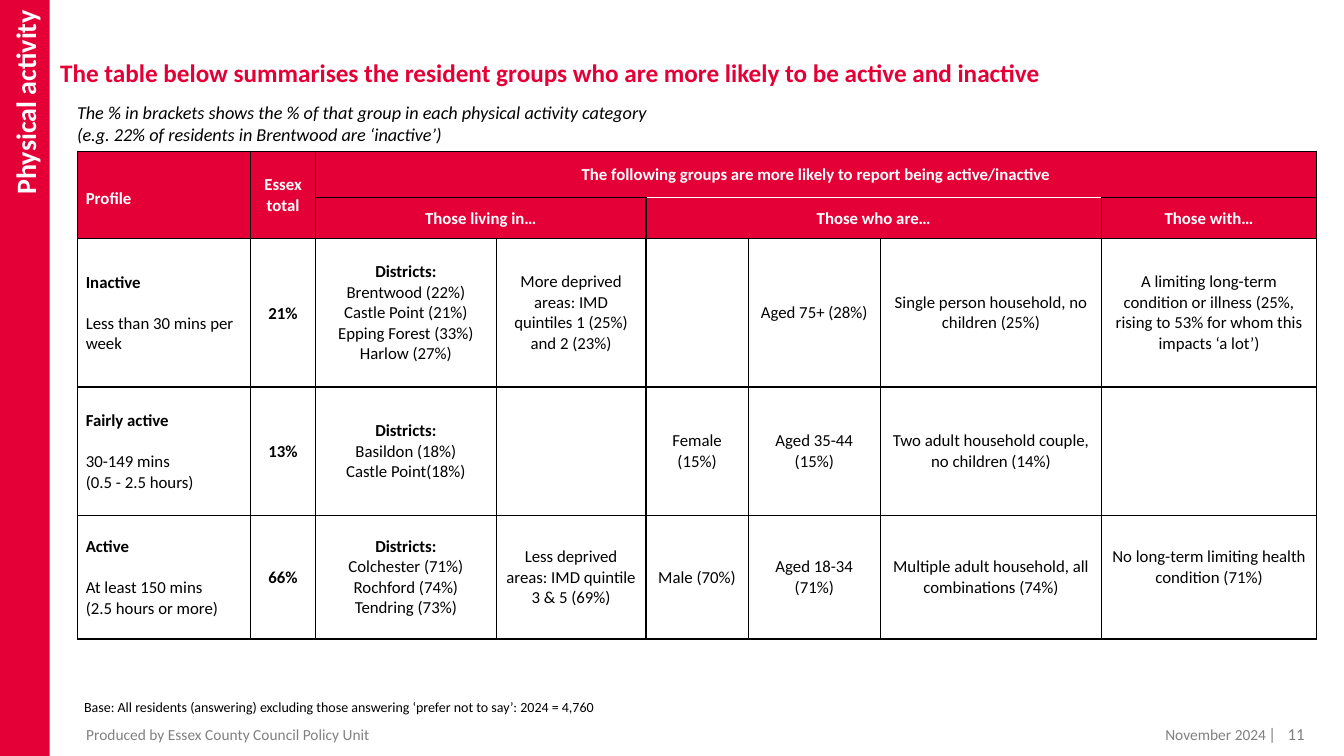
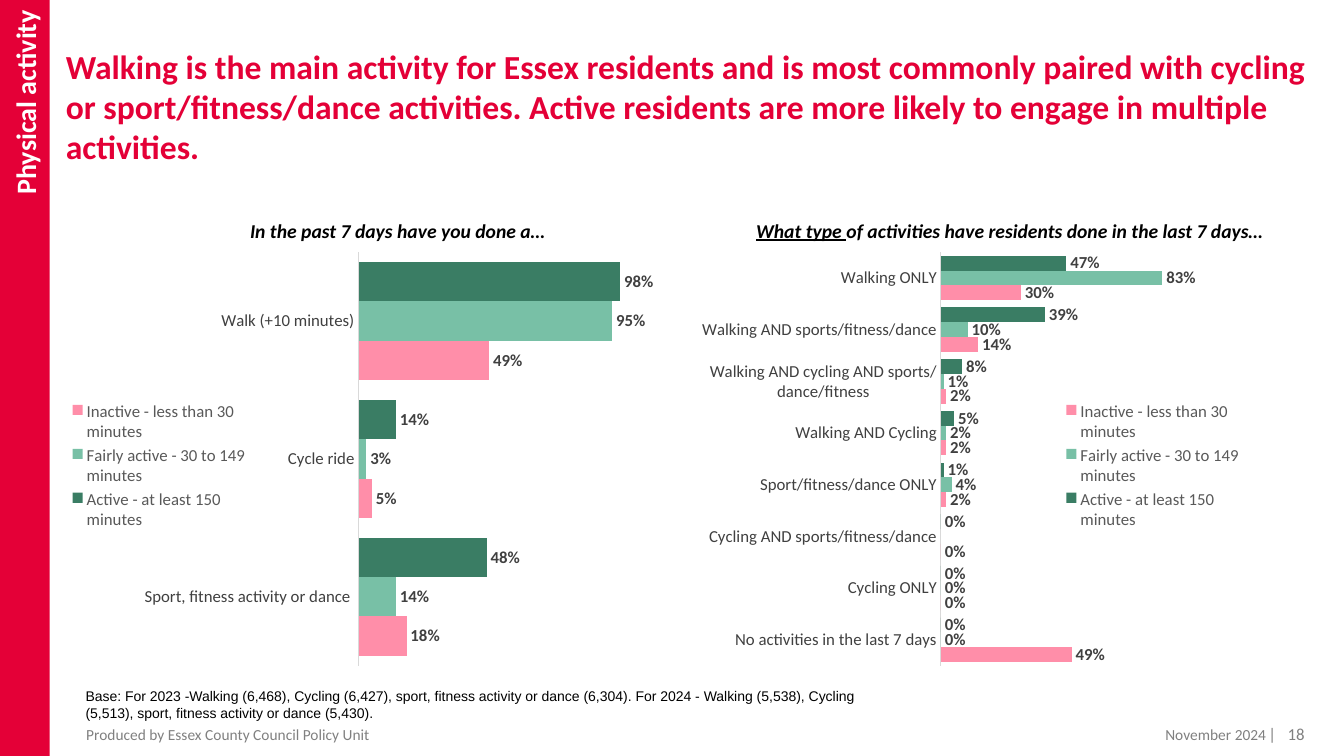
import lxml.etree
import pptx
import pptx.chart.data
import pptx.dml.color
import pptx.enum.chart
import pptx.enum.shapes
import pptx.enum.text
import pptx.oxml.ns
import pptx.util

Pt = pptx.util.Pt
RGBColor = pptx.dml.color.RGBColor
Align = pptx.enum.text.PP_ALIGN
Anchor = pptx.enum.text.MSO_ANCHOR
qn = pptx.oxml.ns.qn

RED = RGBColor(0xE4, 0x00, 0x37)
WHITE = RGBColor(0xFF, 0xFF, 0xFF)
BLACK = RGBColor(0x00, 0x00, 0x00)
FOOTER_GREY = RGBColor(0x80, 0x80, 0x80)
LABEL_GREY = RGBColor(0x40, 0x40, 0x40)
LEGEND_GREY = RGBColor(0x59, 0x59, 0x59)
AXIS_GREY = RGBColor(0xD9, 0xD9, 0xD9)
DARK_GREEN = RGBColor(0x3A, 0x7D, 0x64)
LIGHT_GREEN = RGBColor(0x78, 0xC0, 0xA6)
PINK = RGBColor(0xFF, 0x8E, 0xA9)

FONT = "Calibri"
GROUPS = [
    ("Active - at least 150 minutes", DARK_GREEN),
    ("Fairly active - 30 to 149 minutes", LIGHT_GREEN),
    ("Inactive - less than 30 minutes", PINK),
]


def set_font(font, size=12, color=BLACK, name=FONT, bold=False, italic=False, underline=False):
    font.size = Pt(size)
    font.color.rgb = color
    font.name = name
    font.bold = bold
    font.italic = italic
    font.underline = underline


def write(frame, lines, align=Align.LEFT, anchor=Anchor.TOP, first_bold=False, first_gap=0, **style):
    frame.word_wrap = True
    frame.vertical_anchor = anchor
    for index, line in enumerate(lines):
        para = frame.paragraphs[0] if index == 0 else frame.add_paragraph()
        para.alignment = align
        if index == 0 and first_gap:
            para.space_after = Pt(first_gap)
        spans = [(line, {})] if isinstance(line, str) else line
        for text, extra in spans:
            span = para.add_run()
            span.text = text
            merged = {**style, **extra}
            if first_bold and index == 0:
                merged["bold"] = True
            set_font(span.font, **merged)


def set_margins(target, left, top, right, bottom):
    target.margin_left, target.margin_top = Pt(left), Pt(top)
    target.margin_right, target.margin_bottom = Pt(right), Pt(bottom)


def set_borders(cell, top=BLACK):
    properties = cell._tc.get_or_add_tcPr()
    for side, color in (("L", BLACK), ("R", BLACK), ("T", top), ("B", BLACK)):
        line = lxml.etree.SubElement(properties, qn(f"a:ln{side}"), w=str(Pt(1)))
        fill = lxml.etree.SubElement(line, qn("a:solidFill"))
        lxml.etree.SubElement(fill, qn("a:srgbClr"), val=str(color))


def set_plot_area(chart, left, top, width, height):
    plot_area = chart._chartSpace.chart.plotArea
    for old in plot_area.findall(qn("c:layout")):
        plot_area.remove(old)
    layout = lxml.etree.Element(qn("c:layout"))
    plot_area.insert(0, layout)
    manual = lxml.etree.SubElement(layout, qn("c:manualLayout"))
    settings = [("layoutTarget", "inner"), ("xMode", "edge"), ("yMode", "edge"),
                ("x", left), ("y", top), ("w", width), ("h", height)]
    for tag, value in settings:
        lxml.etree.SubElement(manual, qn(f"c:{tag}"), val=str(value))


class Report:
    def __init__(self):
        self.deck = pptx.Presentation()
        self.deck.slide_width = Pt(960)
        self.deck.slide_height = Pt(540)
        self.page = None

    def add_page(self, number):
        self.page = self.deck.slides.add_slide(self.deck.slide_layouts[6])
        self.band("Physical activity")
        self.text(["Produced by Essex County Council Policy Unit"], 54.5, 519, 460, 11,
                  size=11, color=FOOTER_GREY, anchor=Anchor.MIDDLE)
        self.text(["November 2024"], 738.5, 519, 173, 11,
                  size=11, color=FOOTER_GREY, align=Align.RIGHT, anchor=Anchor.MIDDLE)
        self.text([f"|   {number}"], 899, 513.5, 61, 11, color=FOOTER_GREY)

    def band(self, label):
        band = self.page.shapes.add_shape(
            pptx.enum.shapes.MSO_SHAPE.RECTANGLE, 0, 0, Pt(35.5), Pt(540))
        band.shadow.inherit = False
        band.fill.solid()
        band.fill.fore_color.rgb = RED
        band.line.fill.background()
        set_margins(band.text_frame, 7.2, 7.2, 7.2, 3.6)
        band.element.txBody.bodyPr.set("vert", "vert270")
        write(band.text_frame, [label], align=Align.RIGHT, anchor=Anchor.MIDDLE,
              size=20, color=WHITE, bold=True)

    def text(self, lines, left, top, width, height, **style):
        box = self.page.shapes.add_textbox(Pt(left), Pt(top), Pt(width), Pt(height))
        write(box.text_frame, lines, **style)
        return box

    def title(self, text, left, top, width, height, size):
        box = self.text([text], left, top, width, height, size=size, color=RED, bold=True)
        set_margins(box.text_frame, 0, 0, 0, 0)

    def table(self, left, top, widths, heights):
        table = self.page.shapes.add_table(
            len(heights), len(widths), Pt(left), Pt(top), Pt(sum(widths)), Pt(sum(heights))).table
        table.first_row = False
        table.horz_banding = False
        for column, width in zip(table.columns, widths):
            column.width = Pt(width)
        for row, height in zip(table.rows, heights):
            row.height = Pt(height)
        return table

    def cell(self, cell, lines, margins, fill=None, top_border=BLACK, **style):
        set_borders(cell, top_border)
        if fill is None:
            cell.fill.background()
        else:
            cell.fill.solid()
            cell.fill.fore_color.rgb = fill
        set_margins(cell, *margins)
        cell.vertical_anchor = Anchor.MIDDLE
        write(cell.text_frame, lines, anchor=None, **style)
        cell.vertical_anchor = Anchor.MIDDLE

    def bar_chart(self, left, categories, values, legend_position):
        data = pptx.chart.data.CategoryChartData(number_format="0%")
        data.categories = categories
        for (name, _), numbers in zip(GROUPS, values):
            data.add_series(name, numbers)
        chart = self.page.shapes.add_chart(
            pptx.enum.chart.XL_CHART_TYPE.BAR_CLUSTERED,
            Pt(left), Pt(177), Pt(437), Pt(311), data).chart
        set_font(chart.font, size=10)
        chart.has_title = False
        chart.has_legend = True
        chart.legend.position = legend_position
        chart.legend.include_in_layout = False
        set_font(chart.legend.font, color=LEGEND_GREY)

        axis = chart.category_axis
        axis.reverse_order = True
        axis.major_tick_mark = pptx.enum.chart.XL_TICK_MARK.NONE
        axis.format.line.color.rgb = AXIS_GREY
        axis.format.line.width = Pt(0.75)
        set_font(axis.tick_labels.font, color=LABEL_GREY)
        chart.value_axis.minimum_scale = 0
        chart.value_axis.maximum_scale = 1.1
        chart.value_axis.has_major_gridlines = False
        chart.value_axis.visible = False

        plot = chart.plots[0]
        plot.gap_width = 50
        plot.vary_by_categories = False
        for series, (_, color) in zip(plot.series, GROUPS):
            series.format.fill.solid()
            series.format.fill.fore_color.rgb = color
            labels = series.data_labels
            labels.show_value = True
            labels.number_format = "0%"
            labels.number_format_is_linked = False
            labels.position = pptx.enum.chart.XL_LABEL_POSITION.OUTSIDE_END
            set_font(labels.font, color=LABEL_GREY, bold=True)
        set_plot_area(chart, 0.49, 0.01, 0.48, 0.95)


def build_summary(report):
    report.add_page(11)
    report.title("The table below summarises the resident groups who are more likely to be active "
                 "and inactive", 43, 41, 892, 40, 18)
    report.text(["The % in brackets shows the % of that group in each physical activity category",
                 "(e.g. 22% of residents in Brentwood are ‘inactive’)"],
                48, 69, 840, 39, size=13, italic=True)
    report.text(["Base: All residents (answering) excluding those answering ‘prefer not to say’: "
                 "2024 = 4,760"], 53, 495.5, 450, 19, size=10)

    table = report.table(55.5, 108, [123.5, 46.5, 129, 107, 73, 94.5, 158, 153.5],
                         [33, 29.5, 106, 92, 88])
    headers = {
        (0, 0): (["Profile"], 2, 1),
        (0, 1): (["Essex", "total"], 2, 1),
        (0, 2): (["The following groups are more likely to report being active/inactive"], 1, 6),
        (1, 2): (["Those living in…"], 1, 2),
        (1, 4): (["Those who are…"], 1, 3),
        (1, 7): (["Those with…"], 1, 1),
    }
    for row in range(2):
        for column in range(8):
            lines, height, width = headers.get((row, column), ([], 1, 1))
            cell = table.cell(row, column)
            report.cell(cell, lines, (5.8, 5.8 if column == 0 else 0.7, 5.8, 0), fill=RED,
                        top_border=WHITE if row == 1 and 4 <= column <= 6 else BLACK,
                        align=Align.LEFT if column == 0 else Align.CENTER,
                        color=WHITE, bold=True)
            if height * width > 1:
                cell.merge(table.cell(row + height - 1, column + width - 1))

    profiles = [
        [["Inactive", "Less than 30 mins per week"], ["21%"],
         ["Districts:", "Brentwood (22%)", "Castle Point (21%)", "Epping Forest (33%)",
          "Harlow (27%)"],
         ["More deprived areas: IMD quintiles 1 (25%) and 2 (23%)"], [], ["Aged 75+ (28%)"],
         ["Single person household, no children (25%)"],
         ["A limiting long-term condition or illness (25%, rising to 53% for whom this impacts "
          "‘a lot’)"]],
        [["Fairly active", "30-149 mins", "(0.5 - 2.5 hours)"], ["13%"],
         ["Districts:", "Basildon (18%)", "Castle Point(18%)"], [], ["Female (15%)"],
         ["Aged 35-44 (15%)"], ["Two adult household couple, no children (14%)"], []],
        [["Active", "At least 150 mins", "(2.5 hours or more)"], ["66%"],
         ["Districts:", "Colchester (71%)", "Rochford (74%)", "Tendring (73%)"],
         ["Less deprived areas: IMD quintile 3 & 5 (69%)"], ["Male (70%)"],
         ["Aged 18-34 (71%)"], ["Multiple adult household, all combinations (74%)"],
         ["No long-term limiting health condition (71%)"]],
    ]
    margins = {0: (5.8, 0.7, 2.9, 0), 1: (0.7, 0.7, 0.7, 0)}
    for row, profile in enumerate(profiles, start=2):
        for column, lines in enumerate(profile):
            raised = (row, column) == (4, 7)
            report.cell(table.cell(row, column), lines,
                        margins.get(column, (5.8, 5.8, 5.8, 20.4 if raised else 5.8)),
                        align=Align.LEFT if column == 0 else Align.CENTER,
                        first_bold=column < 3, first_gap=14.6 if column == 0 else 0)


def build_activities(report):
    report.add_page(18)
    report.title("Walking is the main activity for Essex residents and is most commonly paired "
                 "with cycling or sport/fitness/dance activities. Active residents are more likely "
                 "to engage in multiple activities.", 47, 32.5, 902, 112, 24)
    legend = pptx.enum.chart.XL_LEGEND_POSITION
    report.bar_chart(42, ["Walk (+10 minutes)", "Cycle ride", "Sport, fitness activity or dance "],
                     [(0.98, 0.14, 0.48), (0.95, 0.03, 0.14), (0.49, 0.05, 0.18)], legend.LEFT)
    report.bar_chart(458, ["Walking ONLY", "Walking AND sports/fitness/dance",
                           "Walking AND cycling AND sports/dance/fitness",
                           "Walking AND Cycling", "Sport/fitness/dance ONLY",
                           "Cycling AND sports/fitness/dance", "Cycling ONLY",
                           "No activities in the last 7 days"],
                     [(0.47, 0.39, 0.08, 0.05, 0.01, 0, 0, 0),
                      (0.83, 0.1, 0.01, 0.02, 0.04, None, 0, 0),
                      (0.3, 0.14, 0.02, 0.02, 0.02, 0, 0, 0.49)], legend.RIGHT)
    heading = dict(size=14, bold=True, italic=True)
    report.text(["In the past 7 days have you done a…"], 171.5, 152.5, 328, 24, **heading)
    report.text([[("What type ", {"underline": True}),
                  ("of activities have residents done in the last 7 days…", {})]],
                533, 152.5, 382, 24, **heading)
    report.text(["Base: For 2023 -Walking (6,468), Cycling (6,427), sport, fitness activity or dance "
                 "(6,304). For 2024 - Walking (5,538), Cycling (5,513), sport, fitness activity or "
                 "dance (5,430)."], 54, 487.5, 578, 44, size=10, name="Arial")


def main():
    report = Report()
    build_summary(report)
    build_activities(report)
    report.deck.save("out.pptx")


if __name__ == "__main__":
    main()
